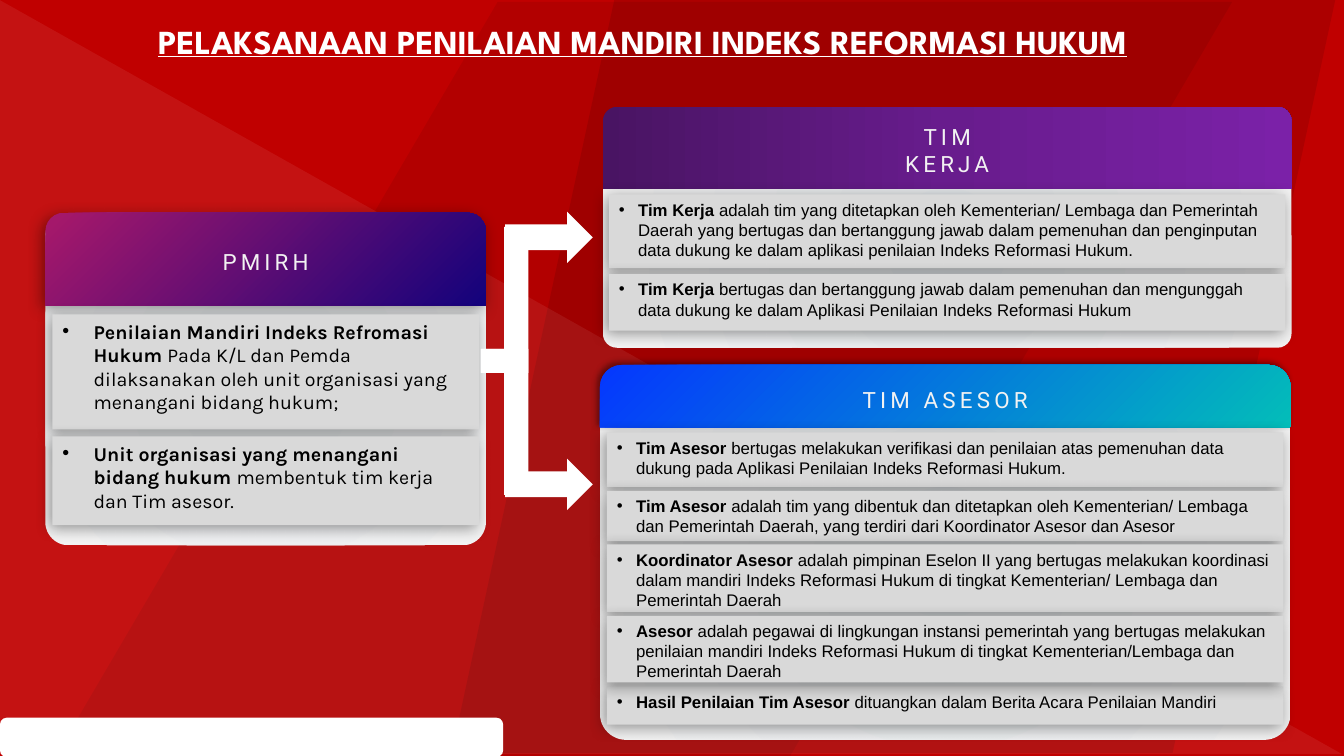
import dataclasses

import pptx
import pptx.dml.color
import pptx.enum.shapes
import pptx.enum.text
import pptx.oxml
import pptx.oxml.ns
import pptx.util
from lxml import etree

Inches = pptx.util.Inches
Pt = pptx.util.Pt
RGB = pptx.dml.color.RGBColor.from_string
SHAPE = pptx.enum.shapes.MSO_SHAPE
ALIGN = pptx.enum.text.PP_ALIGN
ANCHOR = pptx.enum.text.MSO_ANCHOR
qn = pptx.oxml.ns.qn


@dataclasses.dataclass(frozen=True)
class Theme:
    red: str = "C00000"
    white: str = "FFFFFF"
    black: str = "000000"
    light: str = "F2F2F2"
    row: str = "D9D9D9"
    title_font: str = "League Spartan"
    head_font: str = "Roboto"
    title_size: int = 24
    head_size: int = 16
    # Gradients: (stops, direction)
    panel: tuple = (((0, "E5E9EC"), (100, "F2F2F2")), (50, 50, 50, 50))
    purple: tuple = (((0, "491463"), (50, "681C8D"), (100, "7B21A8")), 0)
    blue: tuple = (((0, "03BDB9"), (100, "0537FE")), (100, 100, 0, 0))
    magenta: tuple = (((3, "A4186B"), (100, "13027C")), 45)
    # Shadows: blur, distance, angle
    row_shadow: tuple = (11, 3, 135)
    head_shadow: tuple = (4, 3, 225)


THEME = Theme()


def child(parent, tag, **attrs):
    return etree.SubElement(parent, qn(tag), {k: str(v) for k, v in attrs.items()})


def fill_gradient(sp, gradient):
    """Fill with stops along an angle, or around a circle given its l, t, r, b focus."""
    stops, direction = gradient
    sp.fill.gradient()
    grad = sp._element.spPr.find(qn("a:gradFill"))
    for old in list(grad):
        grad.remove(old)
    stop_list = child(grad, "a:gsLst")
    for pos, color in stops:
        child(child(stop_list, "a:gs", pos=pos * 1000), "a:srgbClr", val=color)
    if isinstance(direction, tuple):
        circle = child(grad, "a:path", path="circle")
        child(circle, "a:fillToRect", **{k: v * 1000 for k, v in zip("ltrb", direction)})
    else:
        child(grad, "a:lin", ang=direction * 60000, scaled=0)


def add_shadow(sp, shadow):
    blur, dist, angle = shadow
    effects = sp._element.spPr.find(qn("a:effectLst"))
    outer = child(effects, "a:outerShdw", blurRad=Pt(blur), dist=Pt(dist),
                  dir=angle * 60000, rotWithShape=0)
    child(child(outer, "a:srgbClr", val=THEME.black), "a:alpha", val=40000)


def paint(sp, fill):
    """Remove the outline and shadow; fill is a colour or a gradient."""
    sp.shadow.inherit = False
    sp.line.fill.background()
    if isinstance(fill, tuple):
        fill_gradient(sp, fill)
    else:
        sp.fill.solid()
        sp.fill.fore_color.rgb = RGB(fill)


def add_box(slide, kind, box, fill, adj=None, alpha=None, shadow=None):
    sp = slide.shapes.add_shape(kind, *map(Inches, box))
    paint(sp, fill)
    if adj is not None:
        sp.adjustments[0] = adj
    if alpha is not None:
        color = sp._element.spPr.find(qn("a:solidFill"))[0]
        child(color, "a:alpha", val=alpha * 1000)
    if shadow:
        add_shadow(sp, shadow)
    return sp


def add_run(p, text, font, size, color=THEME.black, bold=False, underline=False, spacing=0):
    r = p.add_run()
    r.text = text
    r.font.name, r.font.size = font, Pt(size)
    r.font.color.rgb = RGB(color)
    r.font.bold, r.font.underline = bold, underline
    if spacing:
        r._r.get_or_add_rPr().set("spc", str(spacing * 100))
    return r


def add_background(slide):
    slide.background.fill.solid()
    slide.background.fill.fore_color.rgb = RGB(THEME.red)
    add_box(slide, SHAPE.PARALLELOGRAM, (4.48, -0.03, 8.77, 7.5), THEME.black, 0.216, alpha=10)
    add_box(slide, SHAPE.PARALLELOGRAM, (0.54, 0.02, 11.68, 7.5), THEME.black, 0.586, alpha=7)
    add_box(slide, SHAPE.RIGHT_TRIANGLE, (-0.02, -0.01, 13.33, 7.49), THEME.white, alpha=7)
    add_box(slide, SHAPE.ROUNDED_RECTANGLE, (0, 7.12, 4.99, 0.39), THEME.white)


def add_title(slide, box, text):
    tf = slide.shapes.add_textbox(*map(Inches, box)).text_frame
    tf.word_wrap = True
    add_run(tf.paragraphs[0], text, THEME.title_font, THEME.title_size, THEME.white,
            bold=True, underline=True)


def add_row(slide, box, lead, rest, font, size, indent):
    sp = add_box(slide, SHAPE.RECTANGLE, box, THEME.row, shadow=THEME.row_shadow)
    tf = sp.text_frame
    tf.word_wrap = True
    tf.vertical_anchor = ANCHOR.TOP
    p = tf.paragraphs[0]
    p.alignment = ALIGN.LEFT
    pPr = p._p.get_or_add_pPr()
    pPr.set("marL", str(Inches(indent)))
    pPr.set("indent", str(-Inches(indent)))
    child(pPr, "a:buFont", typeface="Arial")
    child(pPr, "a:buChar", char="•")
    add_run(p, lead + " ", font, size, bold=True)
    add_run(p, rest, font, size)


def add_panel(slide, box, head, head_height, head_fill, rows, head_adj, head_shadow=None,
              inset=0.06, font="Arial", size=12, indent=0.19):
    """Card with a header; each row is (offset from the top, height, lead, rest)."""
    x, y, w, h = box
    body_top = y + (0.41 if len(head) > 1 else 0)
    add_box(slide, SHAPE.ROUNDED_RECTANGLE, (x, body_top, w, y + h - body_top), THEME.panel, 0.07)
    sp = add_box(slide, SHAPE.ROUND_2_SAME_RECTANGLE, (x, y, w, head_height), head_fill,
                 head_adj, shadow=head_shadow)
    tf = sp.text_frame
    tf.vertical_anchor = ANCHOR.MIDDLE
    for i, line in enumerate(head):
        p = tf.add_paragraph() if i else tf.paragraphs[0]
        p.alignment = ALIGN.CENTER
        add_run(p, line, THEME.head_font, THEME.head_size, THEME.light, spacing=3)
    for top, height, lead, rest in rows:
        add_row(slide, (x + inset, y + top, w - 2 * inset, height), lead, rest, font, size, indent)


def add_branch(slide, x, y):
    """Fork from (x, y), the middle of its stem, to an upper and a lower arrow."""
    for side, arrow_dy in ((-1, -1.48), (1, 0.97)):
        near, far = y - side * 0.12, y + side * 1.33
        inner = y + side * 0.12
        elbow = [(x, near), (x, inner), (x + 0.23, inner), (x + 0.23, far),
                 (x + 0.47, far), (x + 0.47, near)]
        points = [(Inches(px), Inches(py)) for px, py in elbow]
        builder = slide.shapes.build_freeform(*points[0])
        builder.add_line_segments(points[1:], close=True)
        paint(builder.convert_to_shape(), THEME.white)
        add_box(slide, SHAPE.RIGHT_ARROW, (x + 0.24, y + arrow_dy, 0.87, 0.51), THEME.white)


TIM_KERJA = [
    (0.87, 0.73, "Tim Kerja", "adalah tim yang ditetapkan oleh Kementerian/ Lembaga dan Pemerintah Daerah yang bertugas dan bertanggung jawab dalam pemenuhan dan penginputan data dukung ke dalam aplikasi penilaian Indeks Reformasi Hukum."),
    (1.66, 0.56, "Tim Kerja", "bertugas dan bertanggung jawab dalam pemenuhan dan mengunggah data dukung ke dalam Aplikasi Penilaian Indeks Reformasi Hukum"),
]
TIM_ASESOR = [
    (0.67, 0.54, "Tim Asesor", "bertugas melakukan verifikasi dan penilaian atas pemenuhan data dukung pada Aplikasi Penilaian Indeks Reformasi Hukum."),
    (3.19, 0.38, "Hasil Penilaian Tim Asesor", "dituangkan dalam Berita Acara Penilaian Mandiri"),
    (1.25, 0.5, "Tim Asesor", "adalah tim yang dibentuk dan ditetapkan oleh Kementerian/ Lembaga dan Pemerintah Daerah, yang terdiri dari Koordinator Asesor dan Asesor"),
    (1.78, 0.67, "Koordinator Asesor", "adalah pimpinan Eselon II yang bertugas melakukan koordinasi dalam mandiri Indeks Reformasi Hukum di tingkat Kementerian/ Lembaga dan Pemerintah Daerah"),
    (2.49, 0.66, "Asesor", "adalah pegawai di lingkungan instansi pemerintah yang bertugas melakukan penilaian mandiri Indeks Reformasi Hukum di tingkat Kementerian/Lembaga dan Pemerintah Daerah"),
]
PMIRH = [
    (1.01, 1.14, "Penilaian Mandiri Indeks Refromasi Hukum", "Pada K/L dan Pemda dilaksanakan oleh unit organisasi yang menangani bidang hukum;"),
    (2.22, 0.88, "Unit organisasi yang menangani bidang hukum", "membentuk tim kerja dan Tim asesor."),
]


def main():
    prs = pptx.Presentation()
    prs.slide_width, prs.slide_height = Inches(13.33), Inches(7.5)
    slide = prs.slides.add_slide(prs.slide_layouts[6])
    add_background(slide)
    add_title(slide, (1.47, 0.16, 10.6, 0.5),
              "PELAKSANAAN PENILAIAN MANDIRI INDEKS REFORMASI HUKUM")
    add_panel(slide, (5.98, 1.06, 6.83, 2.39), ["TIM", "KERJA"], 0.82, THEME.purple,
              TIM_KERJA, 0.17)
    add_panel(slide, (5.95, 3.62, 6.85, 3.72), ["TIM ASESOR"], 0.62, THEME.blue,
              TIM_ASESOR, 0.35, THEME.head_shadow, inset=0.07)
    add_panel(slide, (0.45, 2.11, 4.37, 3.3), ["PMIRH"], 0.92, THEME.magenta,
              PMIRH, 0.2, THEME.row_shadow, inset=0.07, font="Karla", size=14, indent=0.31)
    add_branch(slide, 4.77, 3.58)
    prs.save("out.pptx")


if __name__ == "__main__":
    main()
